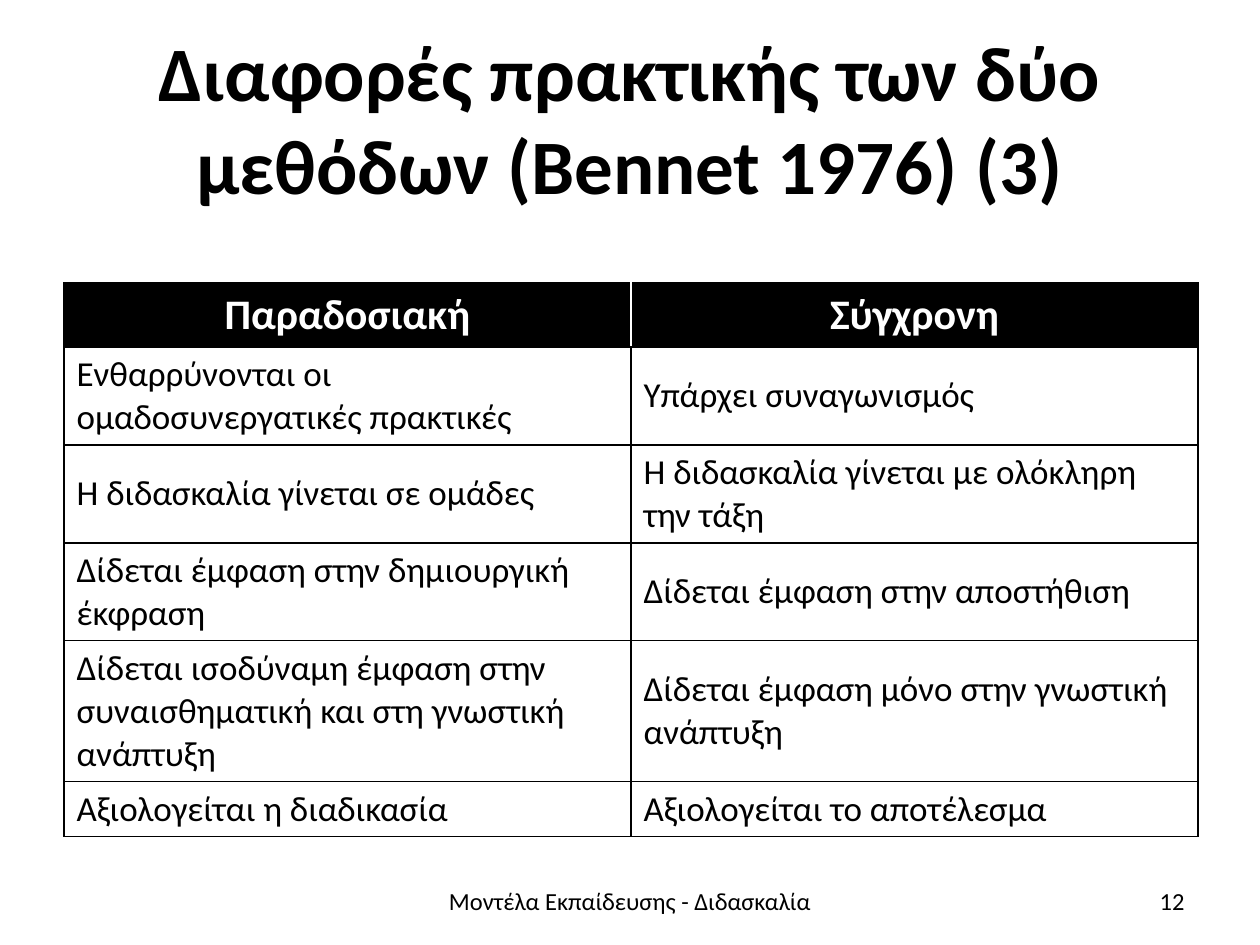
import pptx
import pptx.dml.color
import pptx.enum.text
import pptx.oxml
import pptx.oxml.ns
import pptx.util

PX = 914400 / 126
FONT = "Calibri"
BLACK, WHITE = "000000", "FFFFFF"
ALIGN = pptx.enum.text.PP_ALIGN
MIDDLE = pptx.enum.text.MSO_ANCHOR.MIDDLE

ROWS = [
    ("Παραδοσιακή", "Σύγχρονη"),
    ("Ενθαρρύνονται οι ομαδοσυνεργατικές πρακτικές", "Υπάρχει συναγωνισμός"),
    ("Η διδασκαλία γίνεται σε ομάδες", "Η διδασκαλία γίνεται με ολόκληρη την τάξη"),
    ("Δίδεται έμφαση στην δημιουργική έκφραση", "Δίδεται έμφαση στην αποστήθιση"),
    ("Δίδεται ισοδύναμη έμφαση στην συναισθηματική και στη γνωστική ανάπτυξη",
     "Δίδεται έμφαση μόνο στην γνωστική ανάπτυξη"),
    ("Αξιολογείται η διαδικασία", "Αξιολογείται το αποτέλεσμα"),
]
ROW_HEIGHTS = [64, 98, 98, 98, 141, 55]


def px(n):
    return pptx.util.Emu(round(n * PX))


def rgb(color):
    return pptx.dml.color.RGBColor.from_string(color)


def write(tf, text, size, align, color=BLACK, bold=False):
    tf.text = text
    p = tf.paragraphs[0]
    p.alignment = align
    f = p.runs[0].font
    f.name, f.size, f.bold = FONT, pptx.util.Pt(size), bold
    f.color.rgb = rgb(color)


def add_text(s, box, text, size, align, bold=False):
    tf = s.shapes.add_textbox(*map(px, box)).text_frame
    tf.word_wrap = True
    tf.vertical_anchor = MIDDLE
    write(tf, text, size, align, bold=bold)


def set_borders(cell, borders):
    """Add (side, colour, points) lines, in the order L, R, T, B."""
    tcPr = cell._tc.get_or_add_tcPr()
    for i, (side, color, width) in enumerate(borders):
        tcPr.insert(i, pptx.oxml.parse_xml(
            f'<a:ln{side} {pptx.oxml.ns.nsdecls("a")} w="{pptx.util.Pt(width)}">'
            f'<a:solidFill><a:srgbClr val="{color}"/></a:solidFill></a:ln{side}>'))


def add_comparison(s, box):
    table = s.shapes.add_table(len(ROWS), 2, *map(px, box)).table
    for col in table.columns:
        col.width = px(box[2] / 2)
    for r, (texts, height) in enumerate(zip(ROWS, ROW_HEIGHTS)):
        table.rows[r].height = px(height)
        header = r == 0
        inner = (WHITE if header else BLACK, 1)
        outer = (BLACK, 0.75)
        for c, text in enumerate(texts):
            cell = table.cell(r, c)
            cell.vertical_anchor = MIDDLE
            cell.fill.solid()
            cell.fill.fore_color.rgb = rgb(BLACK if header else WHITE)
            if header:
                write(cell.text_frame, text, 24, ALIGN.CENTER, WHITE, True)
            else:
                write(cell.text_frame, text, 20, ALIGN.LEFT)
            left, right = (outer, inner) if c == 0 else (inner, outer)
            set_borders(cell, [("L", *left), ("R", *right),
                               ("T", *outer), ("B", *outer)])


def add_footer(s, box):
    x, y, w, h = box
    add_text(s, (x, y, w, h), "Μοντέλα Εκπαίδευσης - Διδασκαλία", 14, ALIGN.CENTER)
    add_text(s, (x + w - 294, y, 294, h), "12", 14, ALIGN.RIGHT)


def main():
    prs = pptx.Presentation()
    prs.slide_width, prs.slide_height = px(1260), px(945)
    s = prs.slides.add_slide(prs.slide_layouts[6])
    add_text(s, (63, 38, 1134, 158), "Διαφορές πρακτικής των δύο μεθόδων (Bennet 1976) (3)",
             44, ALIGN.CENTER, bold=True)
    add_comparison(s, (64, 283, 1134, sum(ROW_HEIGHTS)))
    add_footer(s, (63, 876, 1134, 50))
    prs.save("out.pptx")


if __name__ == "__main__":
    main()
